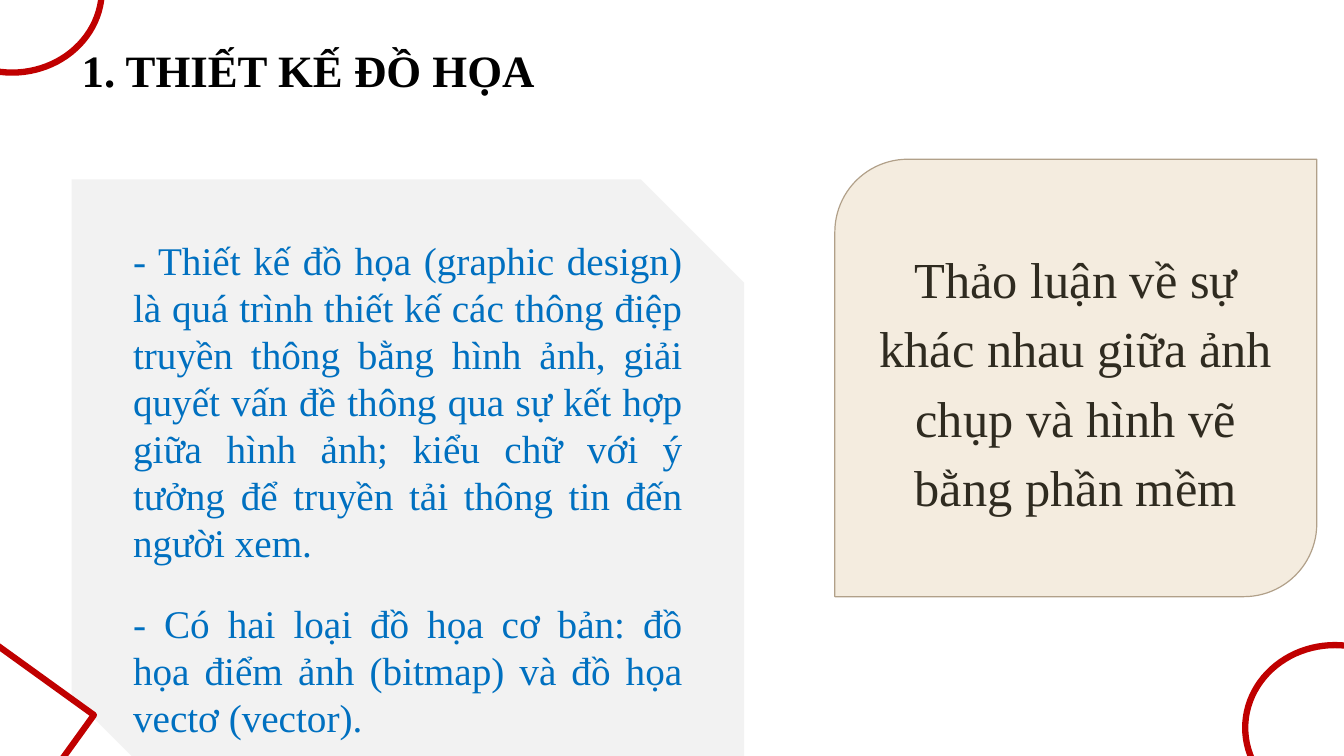
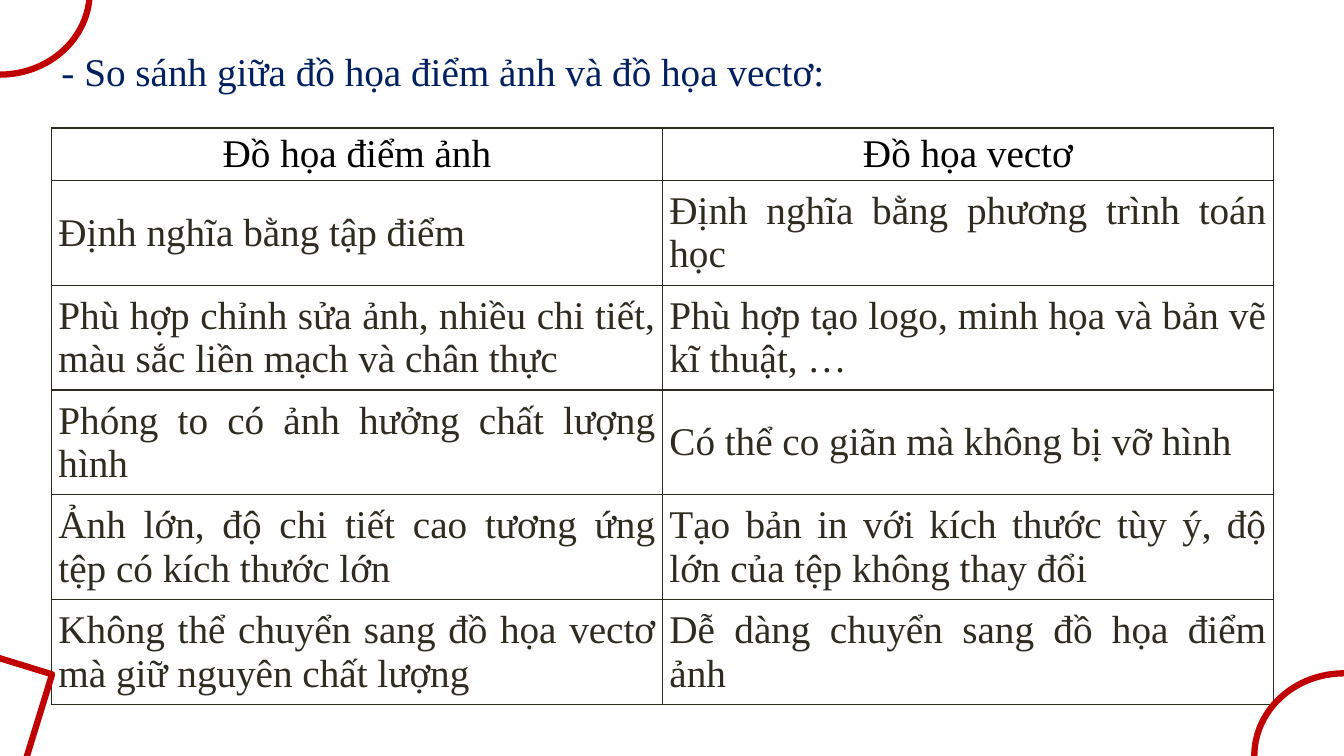
import pptx
import pptx.dml.color
import pptx.enum.shapes
import pptx.enum.text
import pptx.oxml
import pptx.oxml.ns
import pptx.util
from dataclasses import dataclass

Inches = pptx.util.Inches
Pt = pptx.util.Pt
RGB = pptx.dml.color.RGBColor.from_string
SHAPE = pptx.enum.shapes.MSO_SHAPE
ALIGN = pptx.enum.text.PP_ALIGN
ANCHOR = pptx.enum.text.MSO_ANCHOR
GROW = pptx.enum.text.MSO_AUTO_SIZE.SHAPE_TO_FIT_TEXT


@dataclass(frozen=True)
class Theme:
    font: str = "Times New Roman"
    black: str = "000000"
    ink: str = "2F2B20"
    navy: str = "002060"
    blue: str = "0070C0"
    red: str = "C00000"
    white: str = "FFFFFF"
    grey: str = "F2F2F2"
    cream: str = "F4ECDF"
    tan: str = "B1A089"
    heading: int = 32
    callout: int = 36
    body: int = 28
    leading: float = 1.15
    thick: float = 4.5
    thin: float = 0.85
    border: float = 1


def apply(obj, formats):
    for name, value in formats.items():
        setattr(obj, name, value)


class Deck:
    def __init__(self, prs, theme):
        self.prs = prs
        self.theme = theme
        self.slide = None

    def new_slide(self):
        self.slide = self.prs.slides.add_slide(self.prs.slide_layouts[5])

    def text(self, tf, lines, size, color, bold=False, **paragraph):
        for i, line in enumerate(lines):
            p = tf.paragraphs[0] if i == 0 else tf.add_paragraph()
            apply(p, paragraph)
            r = p.add_run()
            r.text = line
            apply(r.font, {"name": self.theme.font, "size": Pt(size), "bold": bold})
            r.font.color.rgb = RGB(color)

    def title(self, text, box, size, color, bold=False):
        sp = self.slide.shapes.title
        apply(sp, dict(zip(("left", "top", "width", "height"), map(Inches, box))))
        apply(sp.text_frame, {"word_wrap": True, "auto_size": GROW,
                              "vertical_anchor": ANCHOR.TOP})
        self.text(sp.text_frame, [text], size, color, bold,
                  alignment=ALIGN.JUSTIFY, line_spacing=self.theme.leading)

    def shape(self, kind, box, fill=None, line=None, width=0, rotation=0):
        sp = self.slide.shapes.add_shape(kind, *map(Inches, box))
        sp.shadow.inherit = False
        sp.rotation = rotation
        if fill:
            sp.fill.solid()
            sp.fill.fore_color.rgb = RGB(fill)
        else:
            sp.fill.background()
        if line:
            sp.line.color.rgb = RGB(line)
            sp.line.width = Pt(width)
        else:
            sp.line.fill.background()
        return sp

    def panel(self, lines, box):
        t = self.theme
        sp = self.shape(SHAPE.SNIP_2_DIAG_RECTANGLE, box, t.grey)
        apply(sp.text_frame, {"word_wrap": True, "auto_size": GROW,
                              "vertical_anchor": ANCHOR.TOP})
        self.text(sp.text_frame, lines, t.body, t.blue, alignment=ALIGN.JUSTIFY,
                  space_before=Pt(12), space_after=Pt(12))

    def callout(self, text, box):
        t = self.theme
        sp = self.shape(SHAPE.ROUND_2_DIAG_RECTANGLE, box, t.cream, t.tan, t.thin)
        apply(sp.text_frame, {"word_wrap": True, "vertical_anchor": ANCHOR.MIDDLE})
        self.text(sp.text_frame, [text], t.callout, t.ink,
                  alignment=ALIGN.CENTER, line_spacing=t.leading)

    def corners(self, circles, square, rotation):
        t = self.theme
        for left, top in circles:
            self.shape(SHAPE.OVAL, (left, top, 1.78, 1.64), t.white, t.red, t.thick)
        self.shape(SHAPE.RECTANGLE, (*square, 1.11, 1.19), None, t.red, t.thick, rotation)

    def borders(self, cell):
        tcPr = cell._tc.get_or_add_tcPr()
        for side in ("lnL", "lnR", "lnT", "lnB"):
            tcPr.append(pptx.oxml.parse_xml(
                f'<a:{side} {pptx.oxml.ns.nsdecls("a")} w="{Pt(self.theme.border)}">'
                f'<a:solidFill><a:srgbClr val="{self.theme.ink}"/></a:solidFill></a:{side}>'))

    def table(self, rows, left, top, col_width, header_height, row_height):
        t = self.theme
        cols = len(rows[0])
        height = header_height + row_height * (len(rows) - 1)
        tbl = self.slide.shapes.add_table(
            len(rows), cols, Inches(left), Inches(top),
            Inches(col_width * cols), Inches(height)).table
        apply(tbl, {"first_row": False, "horz_banding": False})
        for col in tbl.columns:
            col.width = Inches(col_width)
        for i, row in enumerate(rows):
            tbl.rows[i].height = Inches(row_height if i else header_height)
            for j, text in enumerate(row):
                cell = tbl.cell(i, j)
                apply(cell, {"margin_left": Inches(0.07), "margin_right": Inches(0.07),
                             "margin_top": 0, "margin_bottom": 0,
                             "vertical_anchor": ANCHOR.MIDDLE})
                self.borders(cell)
                cell.fill.background()
                self.text(cell.text_frame, [text], t.body, t.ink if i else t.black,
                          alignment=ALIGN.JUSTIFY if i else ALIGN.CENTER)


def main():
    prs = pptx.Presentation()
    apply(prs, {"slide_width": Inches(13.33), "slide_height": Inches(7.5)})
    theme = Theme()
    deck = Deck(prs, theme)

    deck.new_slide()
    deck.title("1. THIẾT KẾ ĐỒ HỌA", (0.71, 0.29, 6.23, 0.67),
               theme.heading, theme.black, True)
    deck.callout("Thảo luận về sự khác nhau giữa ảnh chụp và hình vẽ bằng phần mềm",
                 (8.28, 1.58, 4.78, 4.34))
    deck.panel([
        "- Thiết kế đồ họa (graphic design) là quá trình thiết kế các thông điệp "
        "truyền thông bằng hình ảnh, giải quyết vấn đề thông qua sự kết hợp giữa "
        "hình ảnh; kiểu chữ với ý tưởng để truyền tải thông tin đến người xem.",
        "- Có hai loại đồ họa cơ bản: đồ họa điểm ảnh (bitmap) và đồ họa vectơ (vector).",
    ], (0.71, 1.78, 6.67, 6.15))
    deck.corners([(12.35, 6.4), (-0.77, -0.92)], (-0.43, 6.6), 305.8)

    deck.new_slide()
    deck.title("- So sánh giữa đồ họa điểm ảnh và đồ họa vectơ:",
               (0.51, 0.35, 12.05, 0.6), theme.body, theme.navy)
    deck.table([
        ("Đồ họa điểm ảnh", "Đồ họa vectơ"),
        ("Định nghĩa bằng tập điểm", "Định nghĩa bằng phương trình toán học"),
        ("Phù hợp chỉnh sửa ảnh, nhiều chi tiết, màu sắc liền mạch và chân thực",
         "Phù hợp tạo logo, minh họa và bản vẽ kĩ thuật, …"),
        ("Phóng to có ảnh hưởng chất lượng hình", "Có thể co giãn mà không bị vỡ hình"),
        ("Ảnh lớn, độ chi tiết cao tương ứng tệp có kích thước lớn",
         "Tạo bản in với kích thước tùy ý, độ lớn của tệp không thay đổi"),
        ("Không thể chuyển sang đồ họa vectơ mà giữ nguyên chất lượng",
         "Dễ dàng chuyển sang đồ họa điểm ảnh"),
    ], 0.51, 1.27, 6.06, 0.52, 1.04)
    deck.corners([(12.44, 6.68), (-0.89, -0.9)], (-0.77, 6.45), 287.1)

    prs.save("out.pptx")


if __name__ == "__main__":
    main()
